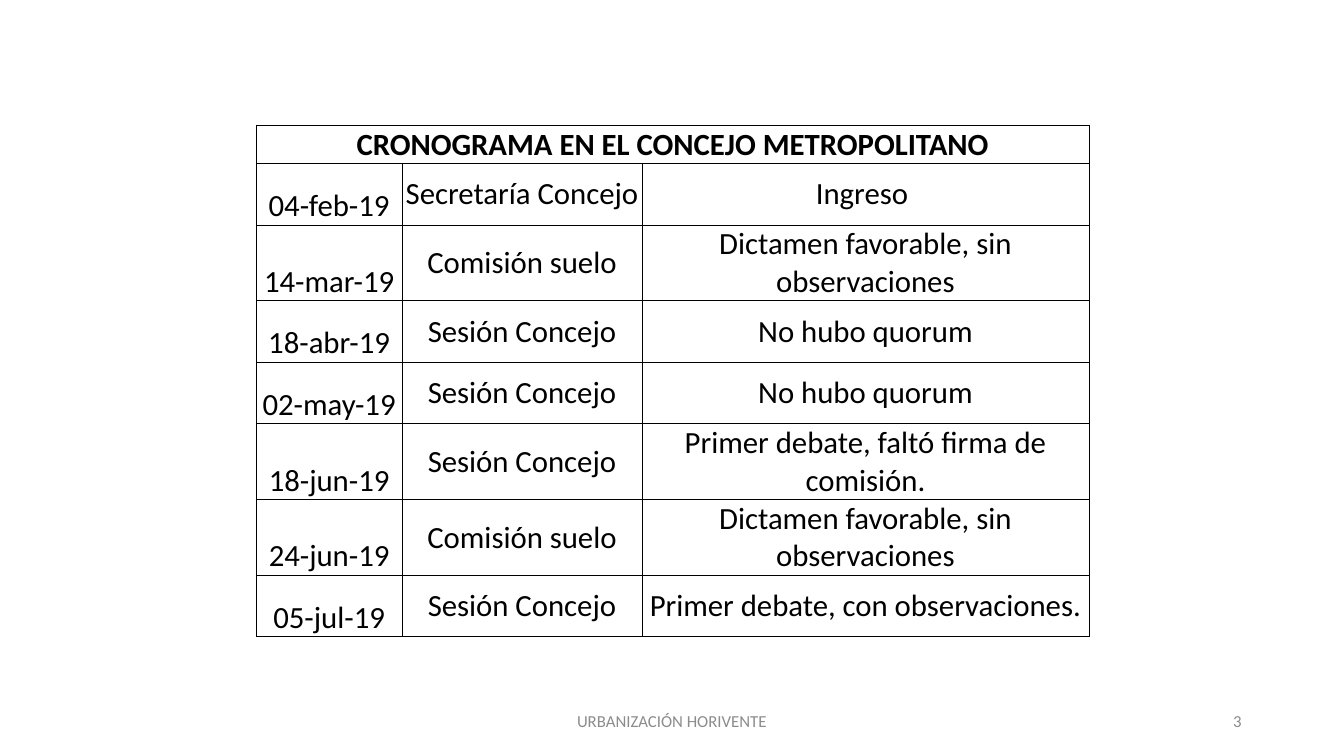
"""Builds the slide with the timetable of the metropolitan council."""
from typing import NamedTuple

from lxml.etree import SubElement
from pptx import Presentation
from pptx.dml.color import RGBColor
from pptx.enum.text import MSO_ANCHOR as Anchor, PP_ALIGN as Align
from pptx.oxml.ns import qn
from pptx.util import Cm, Pt

BLACK = RGBColor(0, 0, 0)
GREY = RGBColor(0x8C, 0x8C, 0x8C)
FONT = "Calibri"
HEADING = "CRONOGRAMA EN EL CONCEJO METROPOLITANO"
COLUMN_WIDTHS = (3.67, 6.05, 11.26)
COLUMN_ANCHORS = (Anchor.BOTTOM, Anchor.MIDDLE, Anchor.MIDDLE)
HEADING_HEIGHT, EVENT_HEIGHT = 0.96, 1.55
CELL_MARGINS = {"margin_left": Cm(0.02), "margin_right": Cm(0.02),
                "margin_top": Cm(0.02), "margin_bottom": 0}


class Event(NamedTuple):
    date: str
    body: str
    outcome: str


class FooterNote(NamedTuple):
    text: str
    left: float
    width: float
    align: Align


EVENTS = (
    Event("04-feb-19", "Secretaría Concejo", "Ingreso "),
    Event("14-mar-19", "Comisión suelo", "Dictamen favorable, sin observaciones"),
    Event("18-abr-19", "Sesión Concejo", "No hubo quorum"),
    Event("02-may-19", "Sesión Concejo", "No hubo quorum"),
    Event("18-jun-19", "Sesión Concejo", "Primer debate, faltó firma de comisión."),
    Event("24-jun-19", "Comisión suelo", "Dictamen favorable, sin observaciones"),
    Event("05-jul-19", "Sesión Concejo", "Primer debate, con observaciones."),
)
FOOTER = (
    FooterNote("URBANIZACIÓN HORIVENTE", 11.22, 11.43, Align.CENTER),
    FooterNote("3", 23.92, 7.62, Align.RIGHT),
)


def write(frame, text: str, size: int, color: RGBColor, align: Align,
          bold: bool = False) -> None:
    """Put one formatted run in a text frame."""
    paragraph = frame.paragraphs[0]
    paragraph.alignment = align
    run = paragraph.add_run()
    run.text = text
    run.font.color.rgb = color
    for name, value in {"name": FONT, "size": Pt(size), "bold": bold}.items():
        setattr(run.font, name, value)


def draw_borders(cell) -> None:
    """Give a cell thin black lines on its four sides."""
    properties = cell._tc.get_or_add_tcPr()
    for position, side in enumerate(("lnL", "lnR", "lnT", "lnB")):
        line = SubElement(properties, qn(f"a:{side}"), w=str(Pt(0.5)))
        fill = SubElement(line, qn("a:solidFill"))
        SubElement(fill, qn("a:srgbClr"), val=str(BLACK))
        properties.insert(position, line)


def draw_timetable(slide) -> None:
    """Draw the table of events under its merged heading."""
    timetable = slide.shapes.add_table(
        len(EVENTS) + 1, len(COLUMN_WIDTHS), Cm(6.46), Cm(3.15),
        Cm(sum(COLUMN_WIDTHS)),
        Cm(HEADING_HEIGHT + EVENT_HEIGHT * len(EVENTS))).table
    timetable.first_row = timetable.horz_banding = False
    for column, width in zip(timetable.columns, COLUMN_WIDTHS):
        column.width = Cm(width)
    for index, row in enumerate(timetable.rows):
        row.height = Cm(EVENT_HEIGHT if index else HEADING_HEIGHT)
        for cell, anchor in zip(row.cells, COLUMN_ANCHORS):
            cell.fill.background()
            cell.vertical_anchor = anchor
            for name, value in CELL_MARGINS.items():
                setattr(cell, name, value)
            draw_borders(cell)
    heading = timetable.cell(0, 0)
    heading.merge(timetable.cell(0, len(COLUMN_WIDTHS) - 1))
    write(heading.text_frame, HEADING, 22, BLACK, Align.CENTER, bold=True)
    for row, event in enumerate(EVENTS, start=1):
        for column, entry in enumerate(event):
            write(timetable.cell(row, column).text_frame, entry, 22, BLACK,
                  Align.CENTER)


def draw_footer_note(slide, note: FooterNote) -> None:
    """Draw one small grey text at the foot of the slide."""
    frame = slide.shapes.add_textbox(
        Cm(note.left), Cm(17.65), Cm(note.width), Cm(1.01)).text_frame
    frame.word_wrap = True
    frame.vertical_anchor = Anchor.MIDDLE
    write(frame, note.text, 12, GREY, note.align)


def main() -> None:
    """Build and save the presentation."""
    deck = Presentation()
    deck.slide_width, deck.slide_height = Cm(33.87), Cm(19.05)
    slide = deck.slides.add_slide(deck.slide_layouts[6])
    draw_timetable(slide)
    for note in FOOTER:
        draw_footer_note(slide, note)
    deck.save("out.pptx")


if __name__ == "__main__":
    main()
